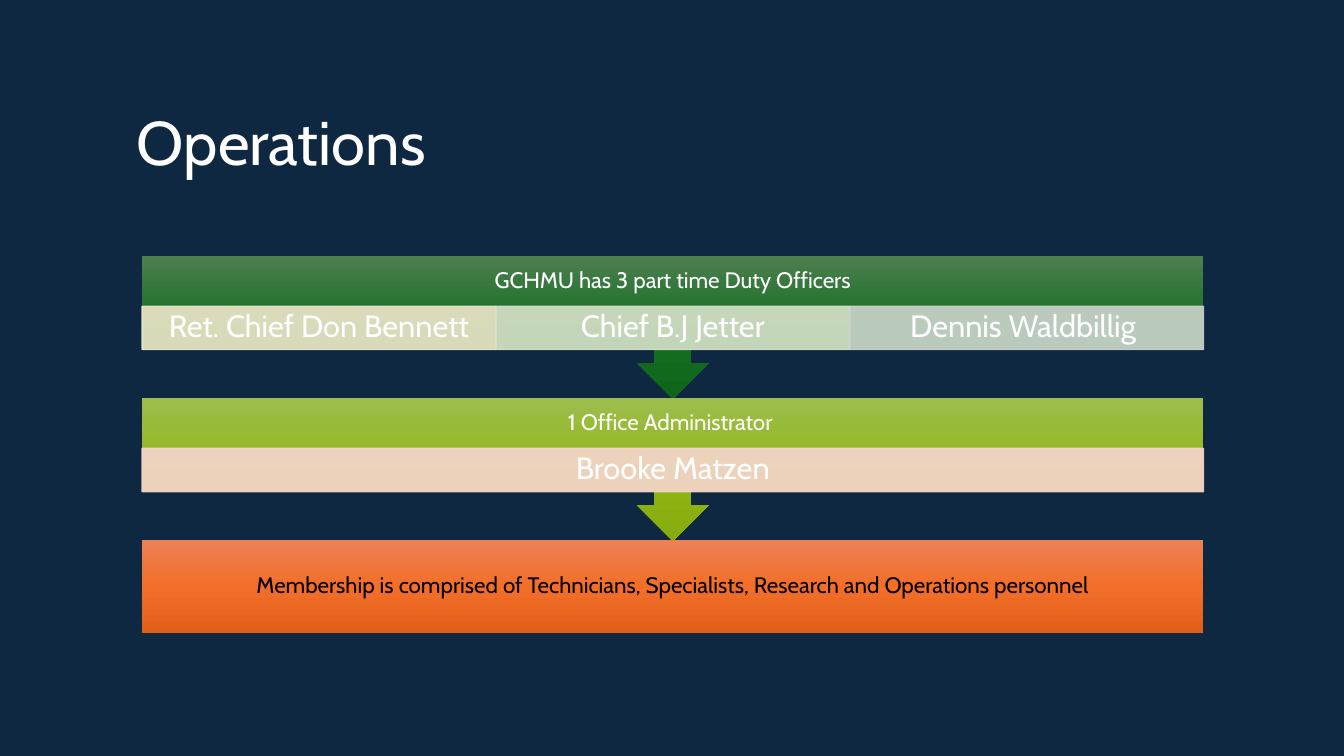
from copy import deepcopy

from lxml import etree
from pptx import Presentation
from pptx.dml.color import RGBColor
from pptx.enum.shapes import MSO_SHAPE
from pptx.enum.text import MSO_ANCHOR, PP_ALIGN
from pptx.oxml.ns import qn
from pptx.util import Cm, Pt

RECTANGLE = MSO_SHAPE.RECTANGLE
CALLOUT = MSO_SHAPE.DOWN_ARROW_CALLOUT
MIDDLE = MSO_ANCHOR.MIDDLE
CENTER, LEFT = PP_ALIGN.CENTER, PP_ALIGN.LEFT

NAVY = RGBColor(0x0E, 0x28, 0x41)
WHITE = RGBColor(0xFF, 0xFF, 0xFF)
BLACK = RGBColor(0x00, 0x00, 0x00)
GREENS = (RGBColor(0x4D, 0x7E, 0x50), RGBColor(0x15, 0x6F, 0x21), RGBColor(0x0F, 0x66, 0x1B))
LIMES = (RGBColor(0x9C, 0xBD, 0x4E), RGBColor(0x92, 0xB9, 0x16), RGBColor(0x85, 0xAB, 0x0D))
ORANGES = (RGBColor(0xED, 0x82, 0x57), RGBColor(0xF2, 0x6E, 0x29), RGBColor(0xE2, 0x5F, 0x1A))
SAND = RGBColor(0xEE, 0xE7, 0xCB)
SAGE = RGBColor(0xD8, 0xE2, 0xCA)
MIST = RGBColor(0xCC, 0xD4, 0xCD)
BLUSH = RGBColor(0xF7, 0xD5, 0xCE)

FONT = "Cabin"
CHART_LEFT, CHART_TOP, CHART_WIDTH = 3.58, 6.45, 26.75
STAGE_PITCH = 3.58
CALLOUT_HEIGHT, BODY_HEIGHT = 3.6, 2.34
HEADING_HEIGHT, NAME_HEIGHT = 1.27, 1.09
HEADING_INSET = 0.3

STAGES = [
    ("GCHMU has 3 part time Duty Officers", GREENS, WHITE,
     [("Ret. Chief Don Bennett", SAND), ("Chief B.J Jetter", SAGE), ("Dennis Waldbillig ", MIST)]),
    ("1 Office Administrator ", LIMES, WHITE, [("Brooke Matzen", BLUSH)]),
    ("Membership is comprised of Technicians, Specialists, Research and Operations personnel",
     ORANGES, BLACK, []),
]


def write(shape, text, size, color, insets, align=CENTER, after=0.35):
    """Put one line of text into a shape, with insets as left, top, right, bottom."""
    frame = shape.text_frame
    frame.word_wrap = True
    frame.vertical_anchor = MIDDLE
    (frame.margin_left, frame.margin_top,
     frame.margin_right, frame.margin_bottom) = map(Cm, insets)
    paragraph = frame.paragraphs[0]
    paragraph.text = text
    paragraph.alignment = align
    paragraph.line_spacing = 0.9
    paragraph.space_after = Pt(size * after)
    paragraph.font.name = FONT
    paragraph.font.size = Pt(size)
    paragraph.font.color.rgb = color


def fill_gradient(shape, colors):
    """Fill a shape from top to bottom with three evenly spaced colours."""
    shape.fill.gradient()
    shape.fill.gradient_angle = 270
    stop_list = next(shape.element.iter(qn("a:gsLst")))
    stop_list.append(deepcopy(stop_list[-1]))
    for index, (stop, color) in enumerate(zip(shape.fill.gradient_stops, colors)):
        stop.position = index / 2
        stop.color.rgb = color


def add_block(slide, kind, left, top, width, height):
    """Add a preset shape without a shadow."""
    block = slide.shapes.add_shape(kind, Cm(left), Cm(top), Cm(width), Cm(height))
    block.shadow.inherit = False
    return block


def add_stage(slide, top, heading, colors, text_color, has_names):
    """Add a stage, as an arrow callout when names stand below its heading."""
    kind, height = (CALLOUT, CALLOUT_HEIGHT) if has_names else (RECTANGLE, BODY_HEIGHT)
    stage = add_block(slide, kind, CHART_LEFT, top, CHART_WIDTH, height)
    fill_gradient(stage, colors)
    stage.line.fill.background()
    names_space = BODY_HEIGHT - HEADING_HEIGHT if has_names else 0
    insets = (HEADING_INSET,) * 3 + (HEADING_INSET + names_space,)
    write(stage, heading, 16, text_color, insets)


def add_name(slide, left, top, width, name, color):
    """Add a slightly transparent cell with a person's name."""
    cell = add_block(slide, RECTANGLE, left, top, width, NAME_HEIGHT)
    cell.fill.solid()
    cell.fill.fore_color.rgb = color
    cell.line.color.rgb = color
    cell.line.width = Pt(1)
    for tint in cell.element.spPr.iter(qn("a:srgbClr")):
        etree.SubElement(tint, qn("a:alpha"), val="90000")
    write(cell, name, 22, WHITE, (0.43, 0.08, 0.43, 0.08))


def main():
    """Build the operations slide."""
    deck = Presentation()
    deck.slide_width, deck.slide_height = Cm(33.87), Cm(19.05)
    slide = deck.slides.add_slide(deck.slide_layouts[6])
    slide.background.fill.solid()
    slide.background.fill.fore_color.rgb = NAVY

    title = slide.shapes.add_textbox(Cm(3.2), Cm(2.69), Cm(24.51), Cm(1.96))
    write(title, "Operations", 44, WHITE, (0.25, 0.13, 0.25, 0.13), LEFT, 0)

    for row, (heading, colors, text_color, names) in enumerate(STAGES):
        top = CHART_TOP + row * STAGE_PITCH
        add_stage(slide, top, heading, colors, text_color, bool(names))
        for column, (name, color) in enumerate(names):
            width = CHART_WIDTH / len(names)
            add_name(slide, CHART_LEFT + column * width, top + HEADING_HEIGHT, width, name, color)

    deck.save("out.pptx")


if __name__ == "__main__":
    main()
